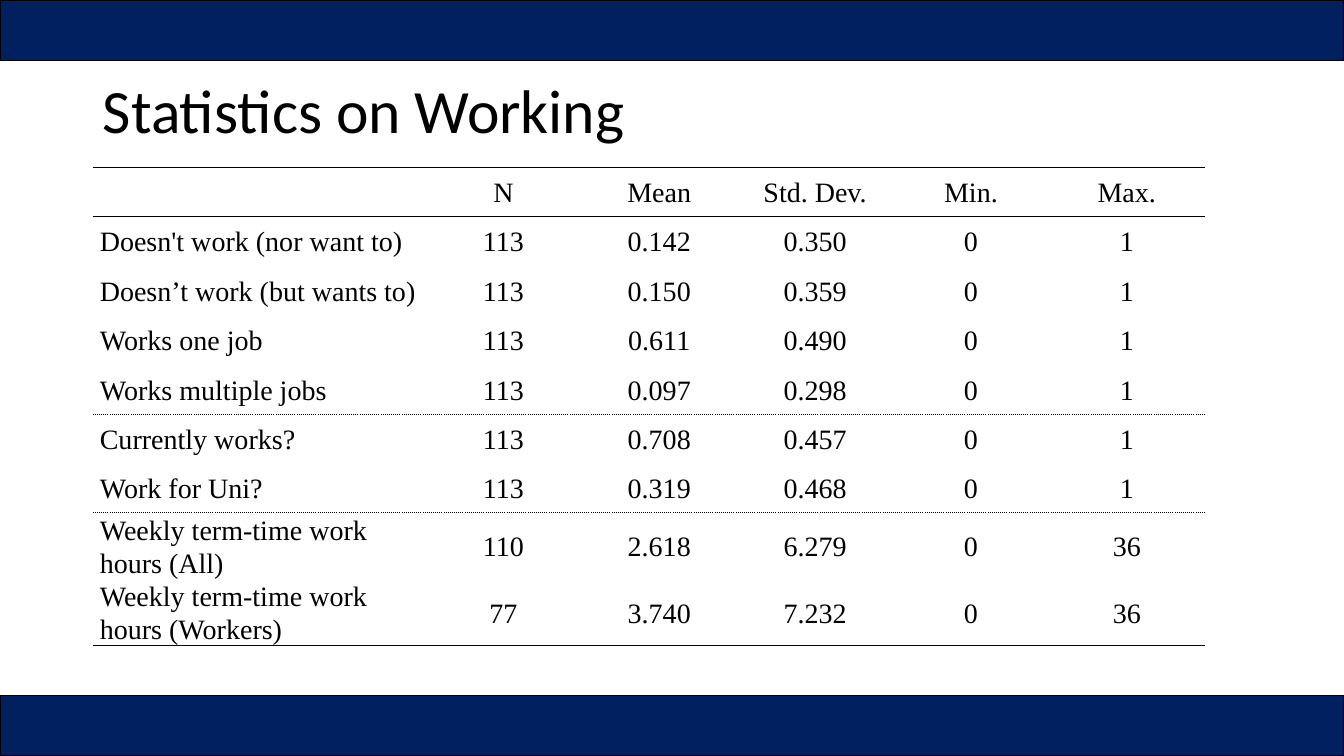
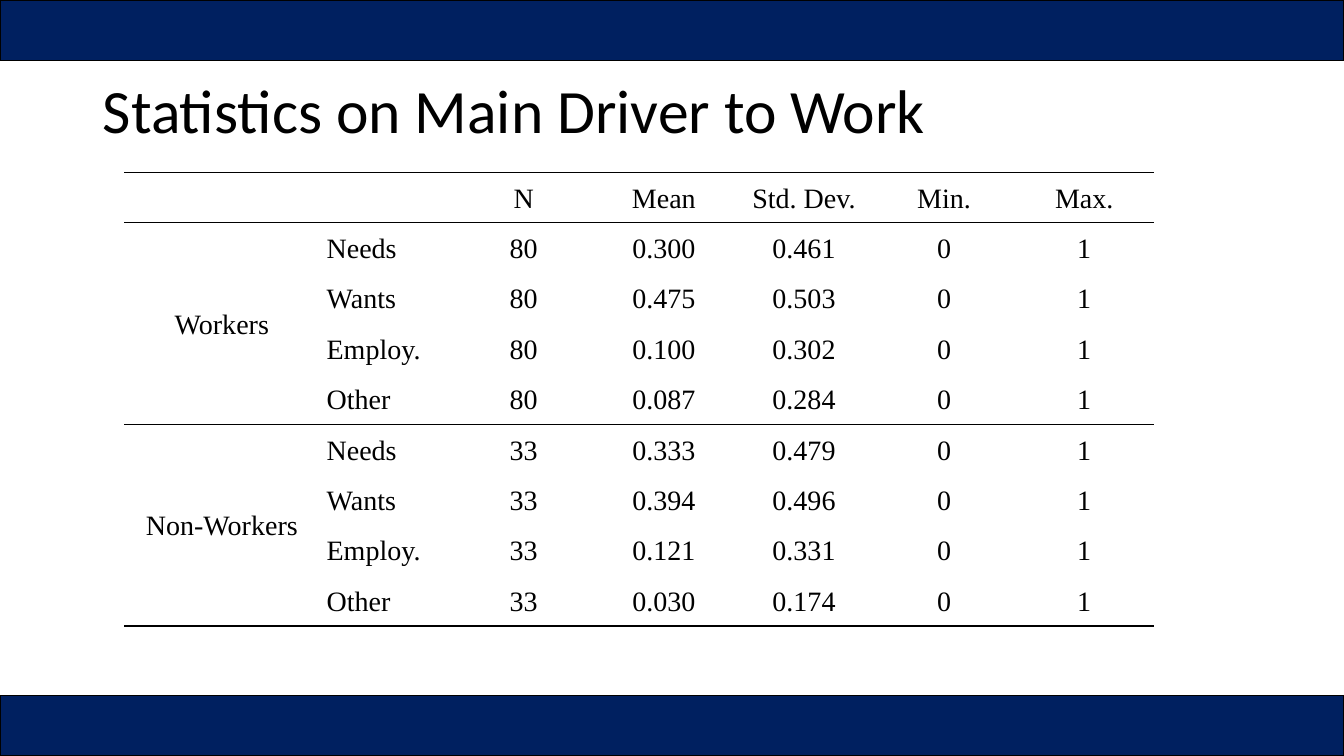
from pptx import Presentation
from pptx.dml.color import RGBColor
from pptx.enum import shapes, text
from pptx.oxml import parse_xml
from pptx.oxml.ns import nsdecls
from pptx.util import Inches, Pt

THEME = {
    "ink": RGBColor(0, 0, 0),
    "navy": RGBColor(0x00, 0x20, 0x60),
    "title": {"name": "Calibri", "size": Pt(44)},
    "body": {"name": "Times New Roman", "size": Pt(20)},
    "rule": Pt(1),
    "plain": "{2D5ABB26-0587-4C30-8999-92F81FD0307C}",
}
WIDE, HIGH, BAND = 13.33, 7.5, 0.6
STATS = ["N", "Mean", "Std. Dev.", "Min.", "Max."]

SLIDES = [
    {
        "title": "Statistics on Working",
        "at": (0.92, 1.66), "width": 11.03, "lead": [3.3], "row": 0.49,
        "rules": {0: "solid", 1: "solid", 5: "sysDot", 7: "sysDot", 9: "solid"},
        "spans": [],
        "rows": [
            ["", *STATS],
            ["Doesn't work (nor want to)", "113", "0.142", "0.350", "0", "1"],
            ["Doesn’t work (but wants to)", "113", "0.150", "0.359", "0", "1"],
            ["Works one job", "113", "0.611", "0.490", "0", "1"],
            ["Works multiple jobs", "113", "0.097", "0.298", "0", "1"],
            ["Currently works?", "113", "0.708", "0.457", "0", "1"],
            ["Work for Uni?", "113", "0.319", "0.468", "0", "1"],
            ["Weekly term-time work hours (All)", "110", "2.618", "6.279", "0", "36"],
            ["Weekly term-time work hours (Workers)", "77", "3.740", "7.232", "0", "36"],
        ],
    },
    {
        "title": "Statistics on Main Driver to Work",
        "at": (1.23, 1.71), "width": 10.22, "lead": [1.94, 1.33], "row": 0.5,
        "rules": {0: "solid", 1: "solid", 5: "solid", 9: "solid"},
        "spans": [(1, 4), (5, 8)],
        "rows": [
            ["", "", *STATS],
            ["Workers", "Needs", "80", "0.300", "0.461", "0", "1"],
            ["", "Wants", "80", "0.475", "0.503", "0", "1"],
            ["", "Employ.", "80", "0.100", "0.302", "0", "1"],
            ["", "Other", "80", "0.087", "0.284", "0", "1"],
            ["Non-Workers", "Needs", "33", "0.333", "0.479", "0", "1"],
            ["", "Wants", "33", "0.394", "0.496", "0", "1"],
            ["", "Employ.", "33", "0.121", "0.331", "0", "1"],
            ["", "Other", "33", "0.030", "0.174", "0", "1"],
        ],
    },
]


def apply(item, values):
    for name, value in values.items():
        setattr(item, name, value)


def write(para, words, font, form):
    apply(para, form)
    if words:
        run = para.add_run()
        run.text = words
        apply(run.font, font)
        run.font.color.rgb = THEME["ink"]


def add_title(slide, words):
    title = slide.shapes.title
    apply(title, {"left": Inches(0.92), "top": Inches(0.4),
                  "width": Inches(11.5), "height": Inches(1.45)})
    frame = title.text_frame
    apply(frame, {"vertical_anchor": text.MSO_ANCHOR.MIDDLE, "word_wrap": True,
                  "auto_size": text.MSO_AUTO_SIZE.NONE})
    write(frame.paragraphs[0], words, THEME["title"],
          {"alignment": text.PP_ALIGN.LEFT, "line_spacing": 0.9})


def add_bands(slide):
    for top in (0, HIGH - BAND):
        band = slide.shapes.add_shape(shapes.MSO_SHAPE.RECTANGLE, 0, Inches(top),
                                      Inches(WIDE), Inches(BAND))
        band.shadow.inherit = False
        band.fill.solid()
        band.fill.fore_color.rgb = THEME["navy"]
        band.line.color.rgb = THEME["ink"]
        band.line.width = THEME["rule"]


def add_rules(cell, dashes):
    props = cell._tc.get_or_add_tcPr()
    lines = []
    for side, dash in zip("LRTB", (None, None, *dashes)):
        paint = (f'<a:solidFill><a:srgbClr val="{THEME["ink"]}"/></a:solidFill>'
                 f'<a:prstDash val="{dash}"/>') if dash else "<a:noFill/>"
        lines.append(parse_xml(f'<a:ln{side} {nsdecls("a")} w="{THEME["rule"]}">'
                               f'{paint}</a:ln{side}>'))
    for spot, line in enumerate(lines):
        props.insert(spot, line)


def add_stats(slide, data):
    rows, lead = data["rows"], data["lead"]
    each = (data["width"] - sum(lead)) / len(STATS)
    cols = lead + [each] * len(STATS)
    left, top = data["at"]
    table = slide.shapes.add_table(
        len(rows), len(cols), Inches(left), Inches(top),
        Inches(data["width"]), Inches(data["row"] * len(rows))).table
    apply(table, {"first_row": False, "horz_banding": False})
    table._tbl.tblPr[0].text = THEME["plain"]
    for col, width in zip(table.columns, cols):
        col.width = Inches(width)
    for row in table.rows:
        row.height = Inches(data["row"])
    for first, last in data["spans"]:
        table.cell(first, 0).merge(table.cell(last, 0))

    label = len(lead) - 1
    for r, row in enumerate(rows):
        for c, words in enumerate(row):
            cell = table.cell(r, c)
            apply(cell, {"vertical_anchor": text.MSO_ANCHOR.MIDDLE,
                         "margin_left": Inches(0.07), "margin_right": Inches(0.07),
                         "margin_top": 0, "margin_bottom": 0})
            cell.fill.background()
            align = text.PP_ALIGN.LEFT if c == label else text.PP_ALIGN.CENTER
            write(cell.text_frame.paragraphs[0], words, THEME["body"],
                  {"alignment": align, "line_spacing": 1.07, "space_after": Pt(8)})
            end = r + (cell.span_height if cell.is_merge_origin else 1)
            add_rules(cell, (data["rules"].get(r), data["rules"].get(end)))


def main():
    deck = Presentation()
    apply(deck, {"slide_width": Inches(WIDE), "slide_height": Inches(HIGH)})
    for data in SLIDES:
        slide = deck.slides.add_slide(deck.slide_layouts[5])
        add_title(slide, data["title"])
        add_bands(slide)
        add_stats(slide, data)
    deck.save("out.pptx")


if __name__ == "__main__":
    main()
